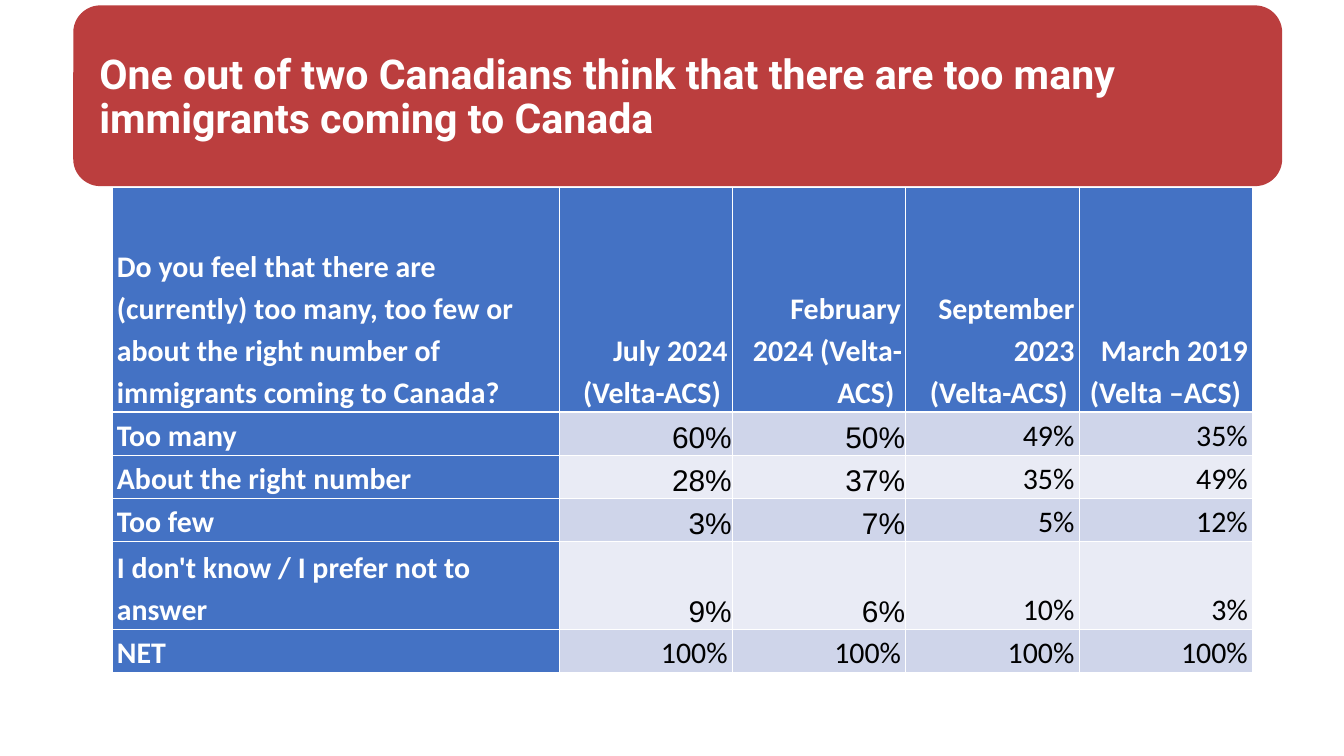
from lxml import etree
from pptx import Presentation
from pptx import util as u
from pptx.dml.color import RGBColor
from pptx.enum import shapes, text
from pptx.oxml.ns import qn

COLORS = {
    "red": "BB3E3E",
    "blue": "4472C4",
    "band_dark": "CFD5EA",
    "band_light": "E9EBF5",
    "white": "FFFFFF",
    "black": "000000",
}
TITLE = {"name": "Roboto", "size": u.Pt(44), "bold": True}
LABEL = {"name": "Calibri", "size": u.Pt(32), "bold": True}
VALUE = {**LABEL, "bold": False}
RECENT = {**VALUE, "name": "Arial"}

HEADERS = [
    ["Do you feel that there are (currently) too many, too few or about "
     "the right number of immigrants coming to Canada?"],
    ["July 2024 (Velta-ACS) "],
    ["February 2024 (Velta-ACS) "],
    ["September 2023", "(Velta-ACS) "],
    ["March 2019 (Velta –ACS) "],
]
ANSWERS = [
    ("Too many", "60%", "50%", "49%", "35%"),
    ("About the right number", "28%", "37%", "35%", "49%"),
    ("Too few", "3%", "7%", "5%", "12%"),
    ("I don't know / I prefer not to answer", "9%", "6%", "10%", "3%"),
    ("NET", "100%", "100%", "100%", "100%"),
]
COL_WIDTHS = [665] + [258] * 4
ROW_HEIGHTS = [334, 64, 64, 64, 131, 64]


class Deck:
    EMU_PER_PX = 9144

    def __init__(self, width, height):
        self.prs = Presentation()
        self.prs.slide_width = self.px(width)
        self.prs.slide_height = self.px(height)
        self.s = self.prs.slides.add_slide(self.prs.slide_layouts[6])

    def px(self, n):
        return u.Emu(n * self.EMU_PER_PX)

    def rgb(self, color):
        return RGBColor.from_string(COLORS[color])

    def paint(self, target, color):
        target.fill.solid()
        target.fill.fore_color.rgb = self.rgb(color)

    def banner(self, *box, color, corner):
        sp = self.s.shapes.add_shape(
            shapes.MSO_SHAPE.ROUNDED_RECTANGLE, *map(self.px, box))
        sp.adjustments[0] = corner
        sp.shadow.inherit = False
        sp.line.fill.background()
        self.paint(sp, color)

    def add_lines(self, tf, lines, font, color, align, spacing):
        for i, line in enumerate(lines):
            p = tf.add_paragraph() if i else tf.paragraphs[0]
            p.alignment = align
            p.line_spacing = spacing
            r = p.add_run()
            r.text = line
            for key, value in font.items():
                setattr(r.font, key, value)
            r.font.color.rgb = self.rgb(color)

    def title(self, line, *box):
        tf = self.s.shapes.add_textbox(*map(self.px, box)).text_frame
        tf.word_wrap = True
        tf.vertical_anchor = text.MSO_ANCHOR.MIDDLE
        self.add_lines(tf, [line], TITLE, "white", text.PP_ALIGN.LEFT, 0.9)

    def border(self, cell, side, width):
        ln = etree.SubElement(cell._tc.get_or_add_tcPr(), qn(f"a:ln{side}"),
                              w=str(u.Pt(width)))
        fill = etree.SubElement(ln, qn("a:solidFill"))
        etree.SubElement(fill, qn("a:srgbClr"), val=COLORS["white"])

    def cell(self, cell, lines, row, col):
        heading = row == 0 or col == 0
        recent = 0 < row < len(ANSWERS) and col in (1, 2)
        side = self.px(1 if recent else 7)
        form = {
            "margin_left": side,
            "margin_right": side,
            "margin_top": self.px(1 if recent else 0),
            "margin_bottom": 0,
            "vertical_anchor": text.MSO_ANCHOR.BOTTOM,
        }
        for key, value in form.items():
            setattr(cell, key, value)
        thick = {(0, "B"), (1, "T")}
        for edge in "LRTB":
            self.border(cell, edge, 3 if (row, edge) in thick else 1)
        band = "band_dark" if row % 2 else "band_light"
        self.paint(cell, "blue" if heading else band)
        self.add_lines(
            cell.text_frame, lines,
            LABEL if heading else RECENT if recent else VALUE,
            "white" if heading else "black",
            text.PP_ALIGN.RIGHT if col else text.PP_ALIGN.LEFT,
            1.0 if recent else 1.15)

    def table(self, left, top, widths, heights, rows):
        box = (left, top, sum(widths), sum(heights))
        table = self.s.shapes.add_table(
            len(heights), len(widths), *map(self.px, box)).table
        for column, width in zip(table.columns, widths):
            column.width = self.px(width)
        for row, height in zip(table.rows, heights):
            row.height = self.px(height)
        for i, row in enumerate(rows):
            for j, lines in enumerate(row):
                self.cell(table.cell(i, j), lines, i, j)


def main():
    deck = Deck(2000, 1125)
    deck.banner(109, 8, 1799, 269, color="red", corner=0.15)
    deck.title("One out of two Canadians think that there are too many "
               "immigrants coming to Canada", 138, 37, 1725, 218)
    rows = [HEADERS] + [[[value] for value in answer] for answer in ANSWERS]
    deck.table(167, 279, COL_WIDTHS, ROW_HEIGHTS, rows)
    deck.prs.save("out.pptx")


if __name__ == "__main__":
    main()
